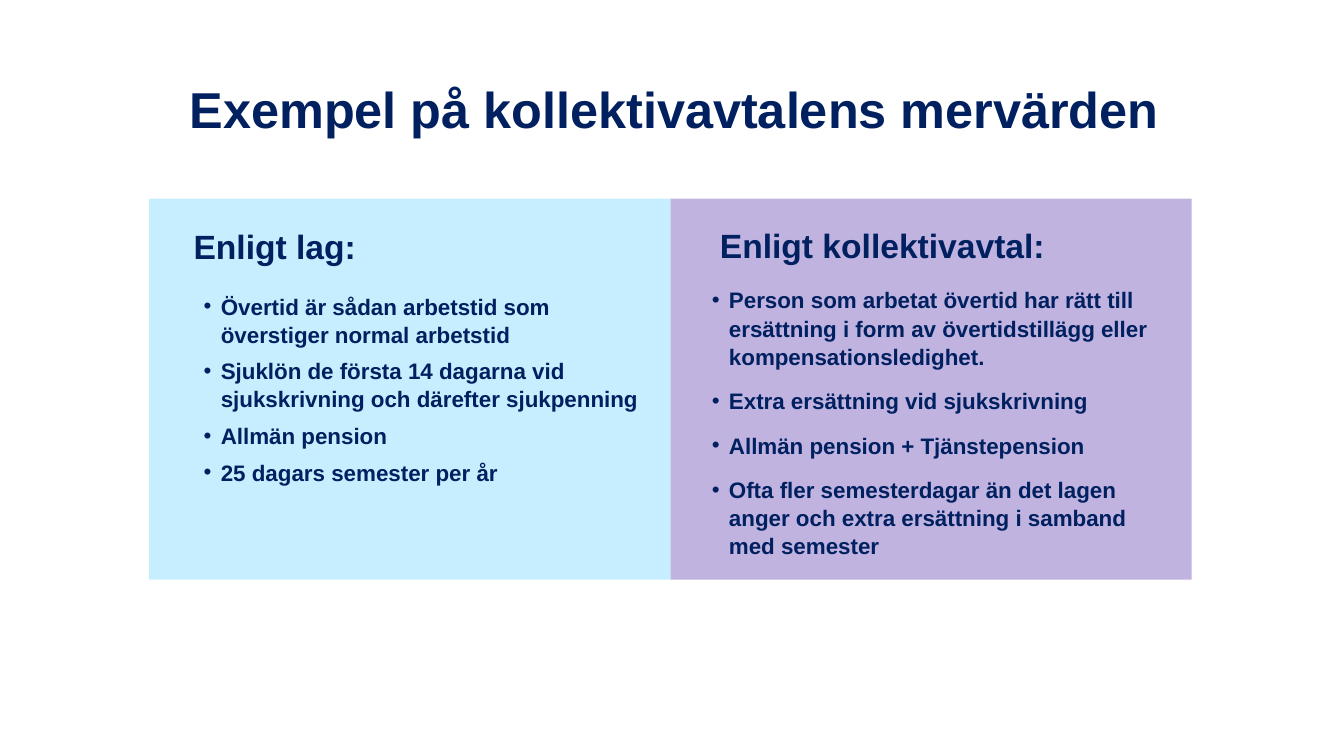
from lxml import etree
from pptx import Presentation
from pptx.dml.color import RGBColor
from pptx.enum import shapes, text
from pptx.oxml import ns
from pptx.util import Inches, Pt

NAVY = RGBColor(0x00, 0x20, 0x60)
LIGHT_BLUE = RGBColor(0xC6, 0xEE, 0xFF)
LILAC = RGBColor(0xC0, 0xB3, 0xE0)

PANEL_LEFT, PANEL_TOP, PANEL_WIDTH, PANEL_HEIGHT = 1.48, 1.97, 5.17, 3.78


class SlideBuilder:
    """Holds the text style and the slide being built."""

    font_name = "Arial"
    color = NAVY
    indent = 0.17

    def __init__(self, slide):
        self.slide = slide

    def panel(self, box, fill):
        panel = self.slide.shapes.add_shape(
            shapes.MSO_SHAPE.RECTANGLE, *map(Inches, box))
        panel.shadow.inherit = False
        panel.fill.solid()
        panel.fill.fore_color.rgb = fill
        panel.line.fill.background()
        # Send behind the placeholders
        self.slide.shapes._spTree.insert(2, panel._element)

    def fill_placeholder(self, idx, box, lines, size, spacing=0.9, before=0,
                         after=0, align=text.PP_ALIGN.LEFT, bullets=False):
        holder = self.slide.placeholders[idx]
        holder.left, holder.top, holder.width, holder.height = map(Inches, box)
        frame = holder.text_frame
        frame.text = "\n".join(lines)
        frame.word_wrap = True
        frame.auto_size = text.MSO_AUTO_SIZE.NONE
        frame.vertical_anchor = text.MSO_ANCHOR.TOP
        for number, paragraph in enumerate(frame.paragraphs):
            if bullets:
                self.add_bullet(paragraph)
            paragraph.alignment = align
            paragraph.line_spacing = spacing
            paragraph.space_before = Pt(before if number else 0)
            paragraph.space_after = Pt(after)
            paragraph.font.name = self.font_name
            paragraph.font.size = Pt(size)
            paragraph.font.bold = True
            paragraph.font.color.rgb = self.color

    def add_bullet(self, paragraph):
        props = paragraph._p.get_or_add_pPr()
        props.set("marL", str(Inches(self.indent)))
        props.set("indent", str(-Inches(self.indent)))
        color = etree.SubElement(props, ns.qn("a:buClr"))
        etree.SubElement(color, ns.qn("a:srgbClr"), val=str(self.color))
        etree.SubElement(props, ns.qn("a:buFont"), typeface=self.font_name)
        etree.SubElement(props, ns.qn("a:buChar"), char="•")

    def title(self, box, line):
        self.fill_placeholder(0, box, [line], 36, align=text.PP_ALIGN.CENTER)

    def heading(self, idx, box, line):
        self.fill_placeholder(idx, box, [line], 24)

    def bullet_list(self, idx, box, lines, before=0):
        self.fill_placeholder(idx, box, lines, 16, spacing=1.05,
                              before=before, after=6, bullets=True)


def main():
    deck = Presentation()
    deck.slide_width, deck.slide_height = Inches(13.33), Inches(7.5)
    comparison = deck.slide_layouts[4]
    builder = SlideBuilder(deck.slides.add_slide(comparison))

    # Side-by-side panels
    for column, fill in enumerate((LIGHT_BLUE, LILAC)):
        builder.panel((PANEL_LEFT + column * PANEL_WIDTH, PANEL_TOP,
                       PANEL_WIDTH, PANEL_HEIGHT), fill)

    builder.title((1.45, 0.79, 10.48, 1.29),
                  "Exempel på kollektivavtalens mervärden")

    # What the law gives
    builder.heading(1, (1.82, 2.24, 4.23, 0.58), "Enligt lag:")
    builder.bullet_list(2, (1.92, 2.84, 4.62, 3.78), [
        "Övertid är sådan arbetstid som överstiger normal arbetstid",
        "Sjuklön de första 14 dagarna vid sjukskrivning och därefter "
        "sjukpenning",
        "Allmän pension",
        "25 dagars semester per år",
    ])

    # What the collective agreement gives
    builder.heading(3, (7.04, 2.23, 4.25, 0.46), "Enligt kollektivavtal:")
    builder.bullet_list(4, (6.96, 2.78, 4.75, 4.36), [
        "Person som arbetat övertid har rätt till ersättning i form av "
        "övertidstillägg eller kompensationsledighet.",
        "Extra ersättning vid sjukskrivning",
        "Allmän pension + Tjänstepension",
        "Ofta fler semesterdagar än det lagen anger och extra ersättning "
        "i samband med semester",
    ], before=5.6)

    deck.save("out.pptx")


if __name__ == "__main__":
    main()
